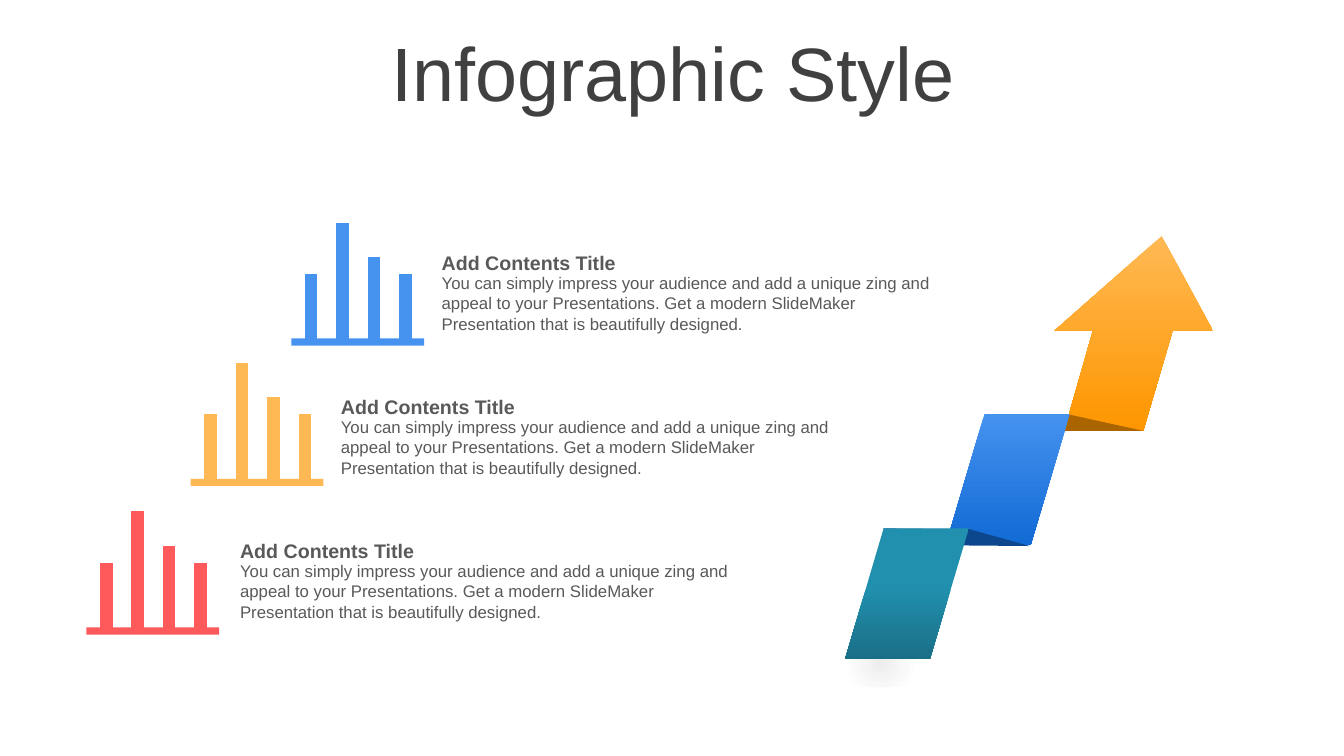
"""Build the infographic slide with bar icons and a folded rising arrow."""
from dataclasses import dataclass
from typing import Any

from pptx import Presentation
from pptx.chart.data import CategoryChartData as ChartData
from pptx.dml.color import RGBColor as Rgb
from pptx.enum.chart import XL_CHART_TYPE as Kind
from pptx.enum.shapes import MSO_SHAPE as Form
from pptx.enum.text import MSO_ANCHOR as Anchor, MSO_AUTO_SIZE as Fit, PP_ALIGN as Align
from pptx.oxml import parse_xml as to_xml
from pptx.oxml.ns import nsdecls, qn
from pptx.util import Emu, Inches, Pt

COLS, ROWS = 160, 90
WIDE, HIGH = Inches(40 / 3), Inches(7.5)
FONT = "Arial"
COLOR = {
    "title": "404040", "text": "595959", "red": "FE5A5B", "amber": "FFB954",
    "blue": "4592EF", "orange": "FE9600", "brown": "AA6400", "royal": "126AD5",
    "navy": "0C478E", "teal": "2190AE", "deep": "1A6F87", "shade": "EEEEEE",
    "white": "FFFFFF",
}
HEAD = "Add Contents Title"
BODY = ("You can simply impress your audience and add a unique zing and appeal to "
        "your Presentations. Get a modern SlideMaker Presentation that is "
        "beautifully designed.")
BARS = (57, 100, 71, 57)
Point = tuple[float, float]


@dataclass
class Item:
    hue: str
    col: float
    row: float


@dataclass
class Facet:
    points: list[Point]
    top: str
    end: str = ""
    start: float = 0


def tile(col: float, row: float) -> list[Point]:
    """Return the corners of a slanted ribbon tile."""
    return [(col, row), (col + 10.15, row), (col + 5.5, row + 15.6),
            (col - 4.6, row + 15.6)]


ITEMS = [Item("blue", 34.7, 24), Item("amber", 22.7, 40.7), Item("red", 10.3, 58.4)]
FACETS = [
    Facet([(138.3, 28.1), (144.4, 39.4), (139.6, 39.4), (136.1, 51.3),
           (126.7, 51.3), (130.1, 39.4), (125.5, 39.4)], "amber", "orange"),
    Facet([(136.1, 51.3), (127.5, 49.4), (117.4, 49.4), (123.5, 51.3)], "brown"),
    Facet(tile(117.2, 49.3), "blue", "royal"),
    Facet([(122.6, 65), (115.4, 63), (105.1, 62.9), (110.6, 64.9)], "navy"),
    Facet(tile(105.2, 62.9), "teal", "deep", 0.44),
]


def rgb(name: str) -> Rgb:
    """Look up a colour by name."""
    return Rgb.from_string(COLOR[name])


def across(col: float) -> Emu:
    """Turn columns into a length."""
    return Emu(round(WIDE * col / COLS))


def down(row: float) -> Emu:
    """Turn rows into a length."""
    return Emu(round(HIGH * row / ROWS))


def box(col: float, row: float, cols: float, rows: float) -> tuple[Emu, ...]:
    """Turn a grid cell into left, top, width and height."""
    return across(col), down(row), across(cols), down(rows)


def paint(shape: Any, top: str, end: str = "", start: float = 0, stop: float = 1) -> None:
    """Fill a shape plainly or with a downward gradient."""
    shape.shadow.inherit = False
    shape.line.fill.background()
    if not end:
        shape.fill.solid()
        shape.fill.fore_color.rgb = rgb(top)
        return
    shape.fill.gradient()
    shape.fill.gradient_angle = 270
    for mark, name, place in zip(shape.fill.gradient_stops, (top, end), (start, stop)):
        mark.color.rgb = rgb(name)
        mark.position = place


def draw_shade(slide: Any) -> None:
    """Draw the soft round shadow below the ribbon."""
    shade = slide.shapes.add_shape(Form.OVAL, *box(86.9, 76.2, 35.9, 5.6))
    paint(shade, "shade", "white", stop=0.25)
    line = shade.fill._xPr.find(qn("a:gradFill")).find(qn("a:lin"))
    line.getparent().replace(line, to_xml(
        f'<a:path {nsdecls("a")} path="circle">'
        '<a:fillToRect l="50000" t="50000" r="50000" b="50000"/></a:path>'))


def draw_facet(slide: Any, facet: Facet) -> None:
    """Draw one face of the ribbon."""
    first, *rest = [(across(x), down(y)) for x, y in facet.points]
    pen = slide.shapes.build_freeform(*first)
    pen.add_line_segments(rest, close=True)
    paint(pen.convert_to_shape(), facet.top, facet.end, facet.start)


def draw_text(slide: Any, text: str, size: int, bold: bool, cell: tuple[Emu, ...]) -> None:
    """Add a wrapped paragraph in the text colour."""
    frame = slide.shapes.add_textbox(*cell).text_frame
    frame.word_wrap = True
    frame.text = text
    font = frame.paragraphs[0].font
    font.name, font.size, font.bold = FONT, Pt(size), bold
    font.color.rgb = rgb("text")


def draw_chart(slide: Any, item: Item) -> None:
    """Add a bar icon with its base strip."""
    data = ChartData()
    data.categories = ["1", "2", "3", "4"]
    data.add_series("Series 1", BARS)
    chart = slide.shapes.add_chart(
        Kind.COLUMN_STACKED, *box(item.col, item.row, 15.8, 17.2), data).chart
    chart.has_legend = chart.has_title = False
    chart.font.name, chart.font.size = FONT, Pt(18)
    axis = chart.value_axis
    axis.minimum_scale, axis.maximum_scale = 0, 114
    axis.has_major_gridlines = False
    axis.visible = chart.category_axis.visible = False
    plot = chart.plots[0]
    plot.gap_width, plot.overlap, plot.vary_by_categories = 150, 100, False
    fill = plot.series[0].format.fill
    fill.solid()
    fill.fore_color.rgb = rgb(item.hue)
    area = chart._chartSpace.chart.plotArea
    for old in area.findall(qn("c:layout")):
        area.remove(old)
    sides = "".join(f'<c:{key} val="{val}"/>' for key, val in (
        ("layoutTarget", "inner"), ("xMode", "edge"), ("yMode", "edge"),
        ("x", 0.03), ("y", 0.03), ("w", 0.95), ("h", 0.94)))
    area.insert(0, to_xml(
        f'<c:layout {nsdecls("c")}><c:manualLayout>{sides}</c:manualLayout></c:layout>'))
    base = slide.shapes.add_shape(Form.RECTANGLE, *box(item.col, item.row + 16.3, 15.8, 0.85))
    paint(base, item.hue)


def draw_title(slide: Any) -> None:
    """Place and format the title."""
    title = slide.shapes.title
    title.left, title.top, title.width, title.height = box(4.2, 4.4, 151.9, 9.5)
    frame = title.text_frame
    frame.text = "Infographic Style"
    frame.auto_size, frame.vertical_anchor = Fit.NONE, Anchor.MIDDLE
    para = frame.paragraphs[0]
    para.alignment, para.line_spacing = Align.CENTER, 0.9
    para.font.name, para.font.size = FONT, Pt(54)
    para.font.color.rgb = rgb("title")


def main() -> None:
    """Build and save the slide."""
    deck = Presentation()
    deck.slide_width, deck.slide_height = WIDE, HIGH
    slide = deck.slides.add_slide(deck.slide_layouts[5])
    draw_title(slide)
    draw_shade(slide)
    for facet in FACETS:
        draw_facet(slide, facet)
    for step, item in enumerate(ITEMS):
        col, row = 51.4 - 12 * step, 29.3 + 17.15 * step
        draw_text(slide, BODY, 12, False, box(col, row + 2.6, 61.2, 8.5))
        draw_text(slide, HEAD, 14, True, box(col, row, 61.2, 4.1))
        draw_chart(slide, item)
    deck.save("out.pptx")


if __name__ == "__main__":
    main()
